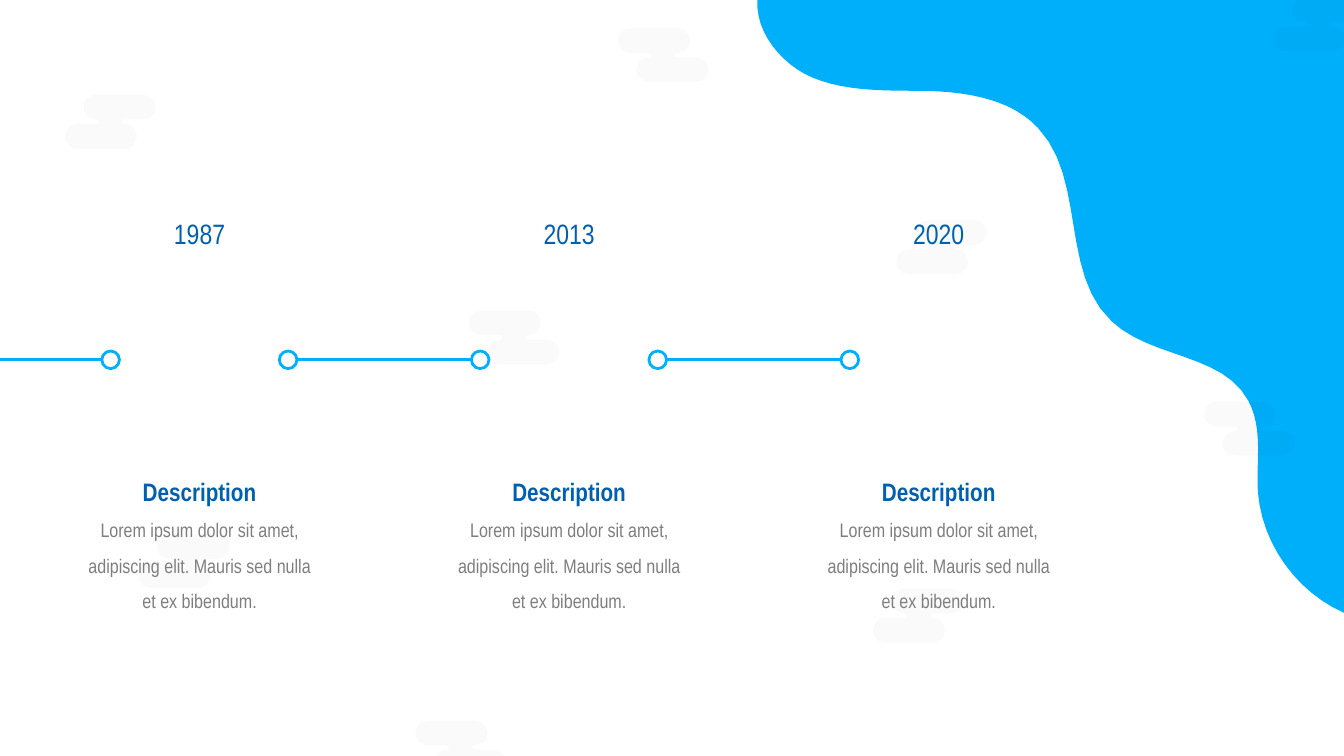
from lxml.etree import SubElement
from pptx import Presentation
from pptx.dml.color import RGBColor
from pptx.enum.shapes import MSO_CONNECTOR, MSO_SHAPE
from pptx.enum.text import MSO_AUTO_SIZE, PP_ALIGN
from pptx.oxml.ns import qn
from pptx.util import Pt

SKY = RGBColor(0x00, 0xAF, 0xFA)
NAVY = RGBColor(0x00, 0x60, 0xB0)
GRAY = RGBColor(0x7E, 0x7E, 0x7E)
WHITE = RGBColor(0xFF, 0xFF, 0xFF)
BLACK = RGBColor(0x00, 0x00, 0x00)
FONT = "Arial Narrow"

deck = Presentation()
deck.slide_width, deck.slide_height = Pt(1920), Pt(1080)
slide = deck.slides.add_slide(deck.slide_layouts[6])
shapes = slide.shapes


def trace(start, parts, steps):
    """Turn lines (one point) and cubic curves (three points) into points."""
    pts = [start]
    for part in parts:
        if len(part) == 1:
            pts.append(part[0])
            continue
        nodes = [pts[-1], *part]
        for step in range(1, steps + 1):
            t = step / steps
            mix = ((1 - t) ** 3, 3 * t * (1 - t) ** 2, 3 * t * t * (1 - t), t ** 3)
            pts.append(tuple(sum(m * n[axis] for m, n in zip(mix, nodes))
                             for axis in (0, 1)))
    return pts


def draw(pts, color):
    """Draw a filled outline without a border."""
    pts = [(Pt(x), Pt(y)) for x, y in pts]
    pen = shapes.build_freeform(*pts[0])
    pen.add_line_segments(pts[1:], close=True)
    form = pen.convert_to_shape()
    form.shadow.inherit = False
    form.fill.solid()
    form.fill.fore_color.rgb = color
    form.line.fill.background()
    return form


# Blue wave in the corner
wave = trace((1920, 875.5), [
    [(1920, 0)],
    [(1082, 0)],
    [(1079, 46), (1116, 92), (1161, 111)],
    [(1212, 132), (1271, 129), (1328, 130)],
    [(1384, 132), (1445, 142), (1483, 183)],
    [(1552, 256), (1514, 390), (1588, 459)],
    [(1644, 512), (1747, 505), (1783, 572)],
    [(1805, 612), (1794, 660), (1797, 703)],
    [(1803, 778), (1853, 846), (1920, 875.5)],
], 12)
draw(wave, SKY)

# Faint clouds: half an outline, turned by 180 degrees for the rest
WIDE, HIGH = 129.6, 77
half = trace((85, 0), [
    [(17.6, 0)],
    [(7.9, 0), (0, 7.9), (0, 17.6)],
    [(0, 27.4), (7.9, 35.3), (17.6, 35.3)],
    [(42.5, 35.3)],
    [(46, 35.3), (48.2, 36.7), (48.2, 38.5)],
    [(48.2, 40.3), (45.4, 41.8), (42.5, 42)],
    [(33.1, 43), (26.6, 50.4), (26.6, 59.4)],
    [(26.6, 69.1), (34.6, 77), (44.6, 77)],
], 4)
cloud = half + [(WIDE - x, HIGH - y) for x, y in half[1:-1]]
clouds = [
    (669.6, 443.5, False), (92.9, 135.4, True), (1720, 573.8, False),
    (882.7, 40.3, False), (1247, 841, True), (1818.7, -3.6, True),
    (1280.2, 314.6, True), (593.3, 1029.6, False), (198, 763.2, True),
]
for left, top, flip in clouds:
    form = draw([(left + (WIDE - x if flip else x), top + y) for x, y in cloud],
                BLACK)
    tint = form.element.spPr.find(".//" + qn("a:srgbClr"))
    SubElement(tint, qn("a:alpha"), val="2000")

# Text columns
STEP = 528
BODY = "Lorem ipsum dolor sit amet, adipiscing elit. Mauris sed nulla et ex bibendum."
for col, year in enumerate(["1987", "2013", "2020"]):
    rows = [
        (year, 129, 278, 312, 62.6, 40, False, NAVY),
        ("Description", 129, 651.6, 312, 57.6, 36, True, NAVY),
        (BODY, 111, 716.4, 348, 162.7, 28, False, GRAY),
    ]
    for text, left, top, width, height, size, bold, color in rows:
        box = shapes.add_textbox(Pt(left + col * STEP), Pt(top), Pt(width), Pt(height))
        frame = box.text_frame
        look = dict(word_wrap=True, auto_size=MSO_AUTO_SIZE.SHAPE_TO_FIT_TEXT,
                    margin_left=Pt(7.2), margin_right=Pt(7.2),
                    margin_top=Pt(7.2), margin_bottom=Pt(7.2))
        for key, value in look.items():
            setattr(frame, key, value)
        para = frame.paragraphs[0]
        para.alignment, para.line_spacing = PP_ALIGN.CENTER, 1.5
        run = para.add_run()
        run.text = text
        for key, value in dict(name=FONT, size=Pt(size), bold=bold).items():
            setattr(run.font, key, value)
        run.font.color.rgb = color

# Timeline: a line with ring ends before each column
RING, MID = 25.2, 514
for col in range(3):
    end = 145.4 + col * STEP
    begin = end - 274.4
    line = shapes.add_connector(MSO_CONNECTOR.STRAIGHT, Pt(max(0, begin + 20)),
                                Pt(MID), Pt(end + 5), Pt(MID))
    SubElement(line.element.spPr, qn("a:effectLst"))
    line.line.color.rgb, line.line.width = SKY, Pt(4)
    for left in (begin, end):
        if left < 0:
            continue
        ring = shapes.add_shape(MSO_SHAPE.OVAL, Pt(left), Pt(MID - RING / 2),
                                Pt(RING), Pt(RING))
        ring.shadow.inherit = False
        ring.fill.solid()
        ring.fill.fore_color.rgb = WHITE
        ring.line.color.rgb, ring.line.width = SKY, Pt(4)

deck.save("out.pptx")
